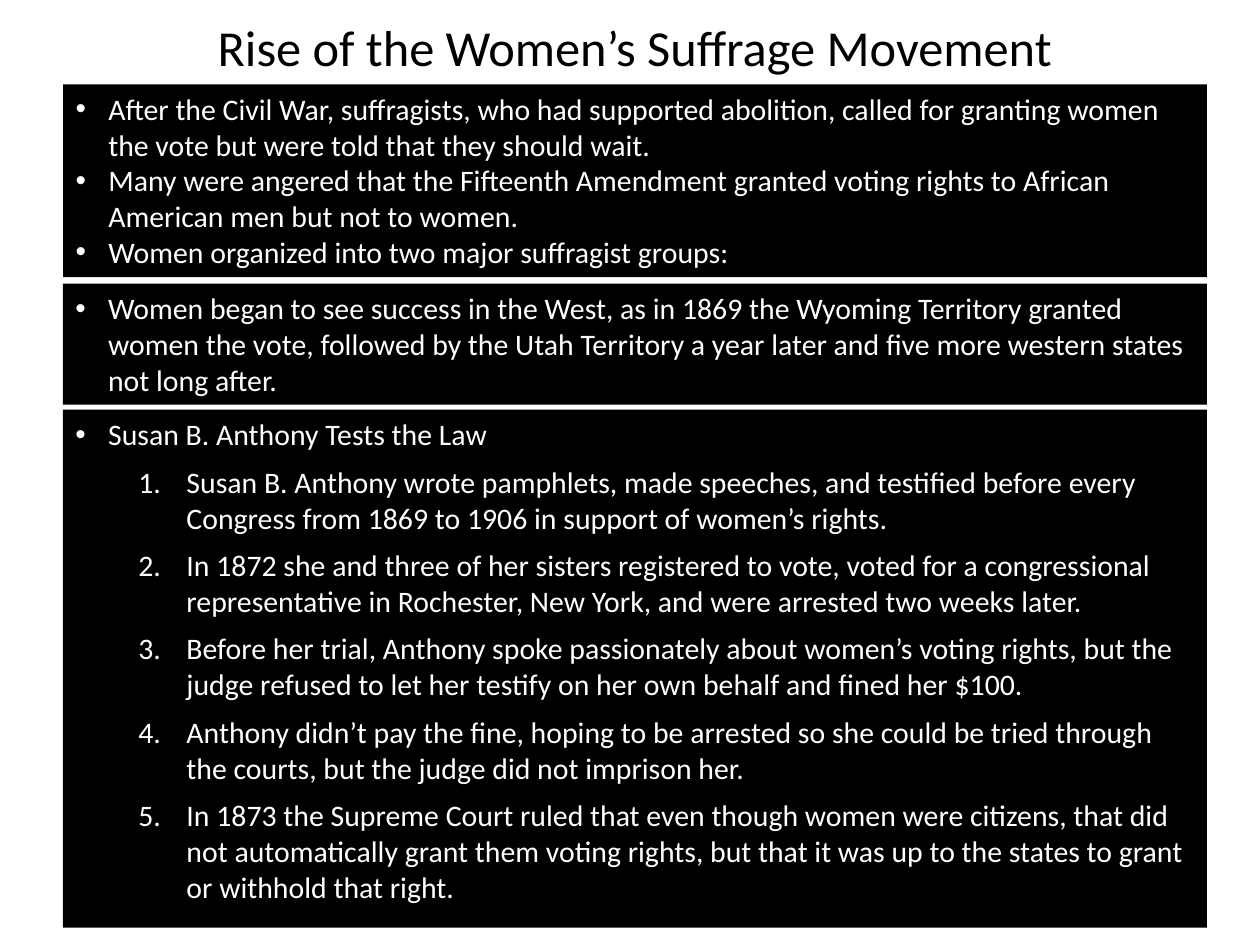
import pptx
import pptx.util
import pptx.dml.color
import pptx.enum.shapes
import pptx.enum.text
import pptx.oxml.ns
from lxml import etree

Cm, Pt = pptx.util.Cm, pptx.util.Pt
COLORS = {"title": "000000", "panel": "000000", "text": "FFFFFF"}
FONT = "Calibri"
LEFT, WIDTH = Cm(1.27), Cm(23.06)

DEMANDS = [
    "After the Civil War, suffragists, who had supported abolition, called for granting women the vote but were told that they should wait.",
    "Many were angered that the Fifteenth Amendment granted voting rights to African American men but not to women.",
    "Women organized into two major suffragist groups:",
]
WESTERN_SUCCESS = [
    "Women began to see success in the West, as in 1869 the Wyoming Territory granted women the vote, followed by the Utah Territory a year later and five more western states not long after.",
]
ANTHONY_HEADING = ["Susan B. Anthony Tests the Law"]
ANTHONY_STEPS = [
    "Susan B. Anthony wrote pamphlets, made speeches, and testified before every Congress from 1869 to 1906 in support of women’s rights.",
    "In 1872 she and three of her sisters registered to vote, voted for a congressional representative in Rochester, New York, and were arrested two weeks later.",
    "Before her trial, Anthony spoke passionately about women’s voting rights, but the judge refused to let her testify on her own behalf and fined her $100.",
    "Anthony didn’t pay the fine, hoping to be arrested so she could be tried through the courts, but the judge did not imprison her.",
    "In 1873 the Supreme Court ruled that even though women were citizens, that did not automatically grant them voting rights, but that it was up to the states to grant or withhold that right.",
]


def color(role):
    return pptx.dml.color.RGBColor.from_string(COLORS[role])


def place(shape, top, height):
    shape.left, shape.top, shape.width, shape.height = LEFT, top, WIDTH, height


def add_run(paragraph, text, size, role):
    run = paragraph.add_run()
    run.text = text
    run.font.name = FONT
    run.font.size = Pt(size)
    run.font.color.rgb = color(role)


def set_marker(paragraph, numbered):
    properties = paragraph._p.get_or_add_pPr()
    margin, hanging = (Cm(2.24), Cm(0.97)) if numbered else (Cm(0.66), Cm(0.66))
    properties.set("marL", str(margin))
    properties.set("indent", str(-hanging))
    qn = pptx.oxml.ns.qn
    if numbered:
        etree.SubElement(properties, qn("a:buFont"), typeface="+mj-lt")
        etree.SubElement(properties, qn("a:buAutoNum"), type="arabicPeriod")
    else:
        etree.SubElement(properties, qn("a:buFont"), typeface="Arial")
        etree.SubElement(properties, qn("a:buChar"), char="•")


def fill_title(title, text):
    place(title, Cm(0.2), Cm(1.47))
    frame = title.text_frame
    frame.auto_size = pptx.enum.text.MSO_AUTO_SIZE.NONE
    frame.vertical_anchor = pptx.enum.text.MSO_ANCHOR.MIDDLE
    frame.paragraphs[0].alignment = pptx.enum.text.PP_ALIGN.CENTER
    add_run(frame.paragraphs[0], text, 28.8, "title")


def fill_panel(panel, top, height, bullets, steps=()):
    place(panel, top, height)
    panel.fill.solid()
    panel.fill.fore_color.rgb = color("panel")
    panel.line.fill.background()
    frame = panel.text_frame
    frame.word_wrap = True
    frame.auto_size = pptx.enum.text.MSO_AUTO_SIZE.NONE
    frame.vertical_anchor = pptx.enum.text.MSO_ANCHOR.TOP
    items = [(text, False) for text in bullets] + [(text, True) for text in steps]
    for index, (text, numbered) in enumerate(items):
        paragraph = frame.add_paragraph() if index else frame.paragraphs[0]
        set_marker(paragraph, numbered)
        paragraph.level = 1 if numbered else 0
        paragraph.alignment = pptx.enum.text.PP_ALIGN.LEFT
        paragraph.space_before = Pt(6.8 if numbered else 0)
        add_run(paragraph, text, 17, "text")


def add_panel(slide, top, height, bullets, steps=()):
    rectangle = pptx.enum.shapes.MSO_SHAPE.RECTANGLE
    panel = slide.shapes.add_shape(rectangle, LEFT, top, WIDTH, height)
    panel.shadow.inherit = False
    fill_panel(panel, top, height, bullets, steps)


def main():
    presentation = pptx.Presentation()
    presentation.slide_width, presentation.slide_height = Cm(25.4), Cm(19.05)
    slide = presentation.slides.add_slide(presentation.slide_layouts[1])
    fill_title(slide.shapes.title, "Rise of the Women’s Suffrage Movement")
    fill_panel(slide.placeholders[1], Cm(1.7), Cm(3.89), DEMANDS)
    add_panel(slide, Cm(5.72), Cm(2.44), WESTERN_SUCCESS)
    add_panel(slide, Cm(8.26), Cm(10.44), ANTHONY_HEADING, ANTHONY_STEPS)
    presentation.save("out.pptx")


if __name__ == "__main__":
    main()
